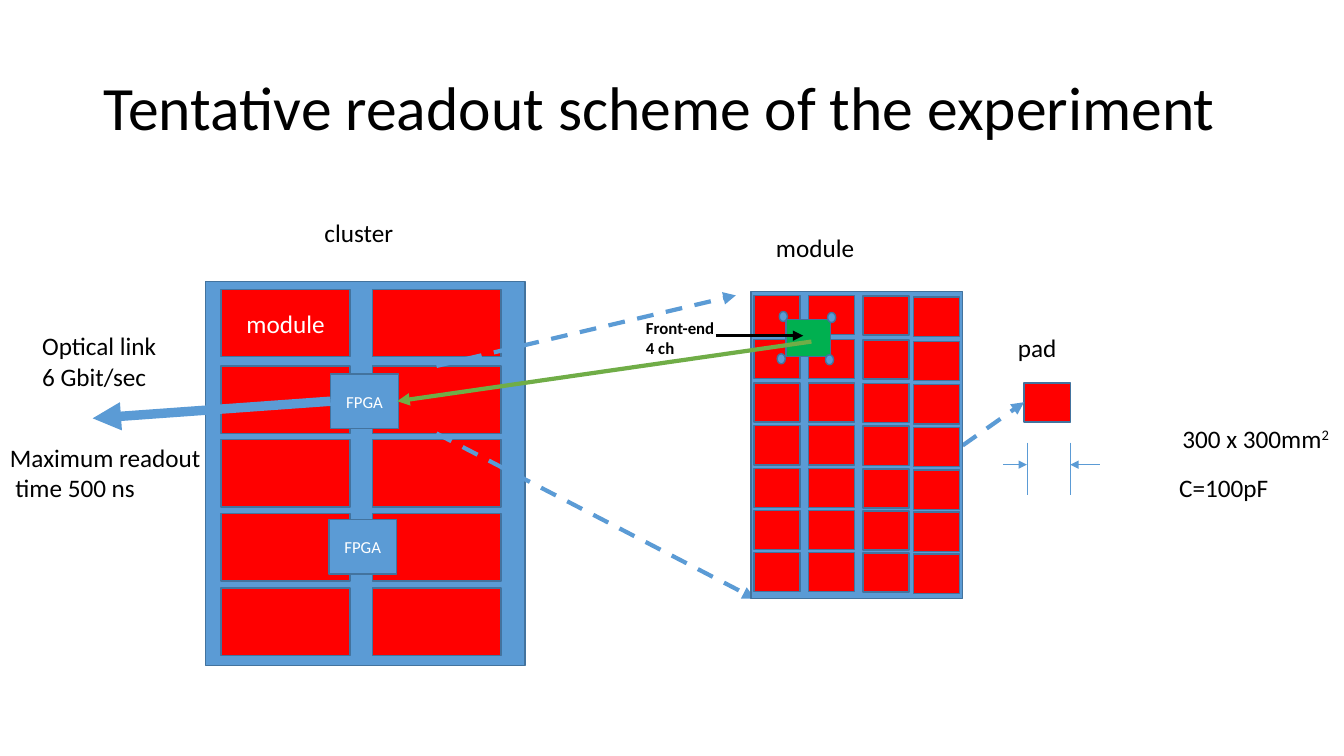
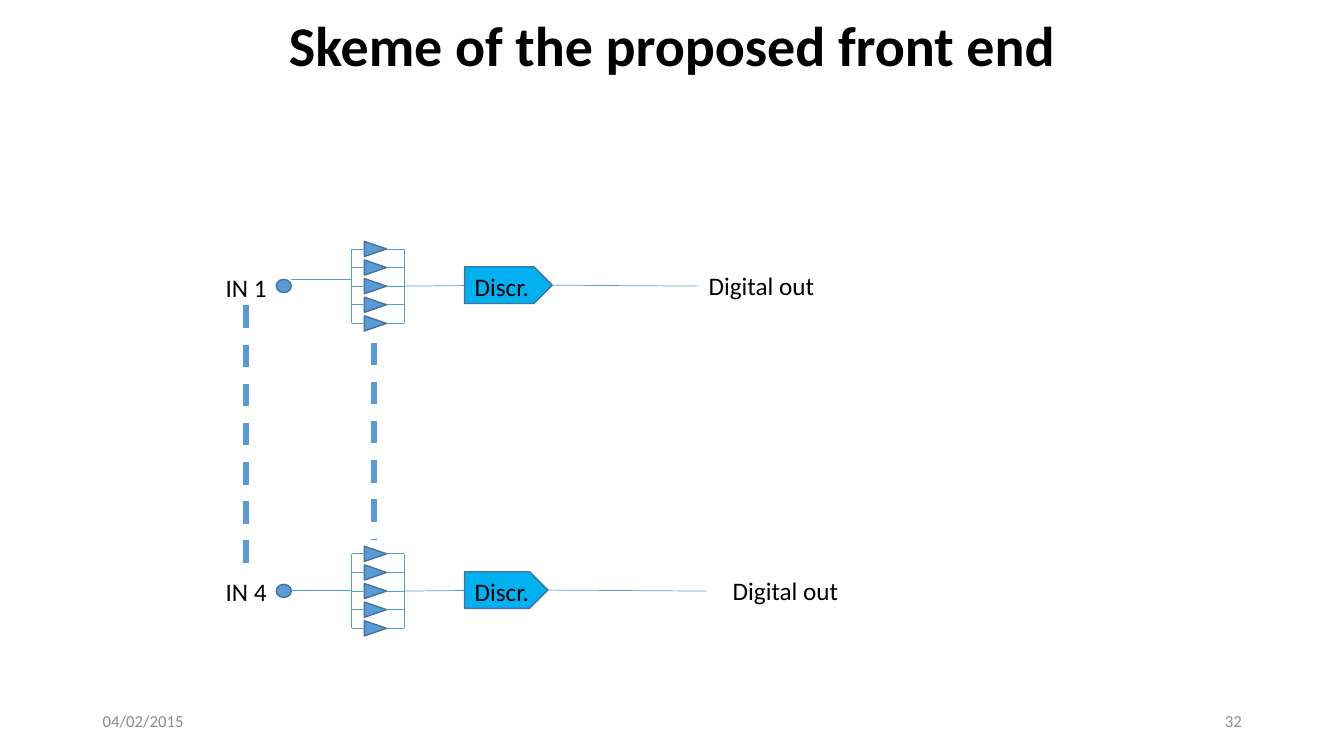
from lxml import etree
from pptx import Presentation
from pptx.dml.color import RGBColor
from pptx.enum.dml import MSO_LINE
from pptx.enum.shapes import MSO_CONNECTOR, MSO_SHAPE
from pptx.enum.text import MSO_ANCHOR, PP_ALIGN
from pptx.oxml.ns import qn
from pptx.util import Pt

RECT, OVAL = MSO_SHAPE.RECTANGLE, MSO_SHAPE.OVAL
TRIANGLE, PLATE = MSO_SHAPE.ISOSCELES_TRIANGLE, MSO_SHAPE.PENTAGON
STRAIGHT, DASH = MSO_CONNECTOR.STRAIGHT, MSO_LINE.DASH
LEFT, CENTER, RIGHT = PP_ALIGN.LEFT, PP_ALIGN.CENTER, PP_ALIGN.RIGHT
TOP, MIDDLE = MSO_ANCHOR.TOP, MSO_ANCHOR.MIDDLE

FONT = "Calibri"
COLORS = {
    "blue": "5B9BD5", "edge": "43739E", "red": "FF0000", "chip": "00B050",
    "green": "70AD47", "cyan": "00B0F0", "black": "000000", "white": "FFFFFF",
    "grey": "8C8C8C",
}


def rgb(name):
    return RGBColor.from_string(COLORS[name])


def write(sp, text, size=18, color="black", bold=False, align=LEFT, anchor=TOP):
    tf = sp.text_frame
    tf.word_wrap = True
    tf.vertical_anchor = anchor
    tf.text = text
    for p in tf.paragraphs:
        p.alignment = align
        for r in p.runs:
            r.font.name = FONT
            r.font.size = Pt(size)
            r.font.bold = bold
            r.font.color.rgb = rgb(color)
    return tf


def add_text(s, x, y, w, h, text, **style):
    return write(s.shapes.add_textbox(Pt(x), Pt(y), Pt(w), Pt(h)), text, **style)


def add_title(s, x, y, w, h, text, size, **style):
    tf = add_text(s, x, y, w, h, text, size=size, anchor=MIDDLE, **style)
    tf.paragraphs[0].line_spacing = 0.9


def add_footer(s, x, y, w, h, date, number):
    half = w / 2
    add_text(s, x, y, half, h, date, size=12, color="grey", anchor=MIDDLE)
    add_text(s, x + half, y, half, h, number, size=12, color="grey",
             align=RIGHT, anchor=MIDDLE)


def add_box(s, x, y, w, h, fill, kind=RECT):
    sp = s.shapes.add_shape(kind, Pt(x), Pt(y), Pt(w), Pt(h))
    sp.shadow.inherit = False
    sp.fill.solid()
    sp.fill.fore_color.rgb = rgb(fill)
    sp.line.color.rgb = rgb("edge")
    sp.line.width = Pt(1)
    return sp


def add_line(s, x1, y1, x2, y2, width=0.5, color="blue", dash=False, arrow=False):
    c = s.shapes.add_connector(STRAIGHT, Pt(x1), Pt(y1), Pt(x2), Pt(y2))
    c.line.color.rgb = rgb(color)
    c.line.width = Pt(width)
    if dash:
        c.line.dash_style = DASH
    spPr = c._element.spPr
    if arrow:
        etree.SubElement(spPr.find(qn("a:ln")), qn("a:tailEnd"), type="triangle")
    etree.SubElement(spPr, qn("a:effectLst"))


def draw_cluster(s, x, y, w, h):
    add_text(s, x + 77.7, y - 49, 80, 29, "cluster")
    add_box(s, x, y, w, h, "blue")
    for row, dy in enumerate((5.7, 60.4, 113, 166, 219)):
        for col in range(2):
            sp = add_box(s, x + 11 + 108 * col, y + dy, 92, 48.2, "red")
            if row == col == 0:
                write(sp, "module", color="white", align=CENTER, anchor=MIDDLE)
    for dx, dy in ((89.3, 66.2), (88, 170)):
        sp = add_box(s, x + dx, y + dy, 48.2, 39, "blue")
        write(sp, "FPGA", size=12, color="white", align=CENTER, anchor=MIDDLE)


def draw_module(s, x, y, w, h):
    add_text(s, x + 10.8, y - 46, 90, 29, "module")
    add_box(s, x, y, w, h, "blue")
    for dx, drop in ((2.2, 0), (41, 0), (80, 0.3), (116, 1.2)):
        for dy in (3, 34.5, 65.5, 96, 126.5, 156.5, 186.5):
            add_box(s, x + dx, y + dy + drop, 33, 28, "red")


def draw_front_end(s, x, y, w, h):
    add_box(s, x, y, w, h, "chip")
    tf = add_text(s, x - 107.3, y - 5, 71, 36, "Front-end\n4 ch", size=12, bold=True)
    tf.margin_right = 0
    add_line(s, x - 50.4, y + 11.6, x + 12.2, y + 11.6, 2.5, "black", arrow=True)
    for dx, dy in ((-5, -5.7), (29.5, -5), (-6.5, 24.5), (28, 25.2)):
        add_box(s, x + dx, y + dy, 5.8, 7.2, "blue", OVAL)


def draw_pad(s, x, y, w, h):
    add_text(s, x - 11.5, y - 39.6, 60, 29, "pad")
    add_box(s, x, y, w, h, "red")
    for tick, start in ((2, -15), (w, w + 21)):
        add_line(s, x + tick, y + 42.5, x + tick, y + 80)
        add_line(s, x + start, y + 58.3, x + tick, y + 58.3, arrow=True)
    p = add_text(s, x + 106, y + 25.2, 125, 29, "300 x 300mm").paragraphs[0]
    r = p.add_run()
    r.text = "2"
    r.font.name = FONT
    r.font.size = Pt(18)
    r.font.color.rgb = rgb("black")
    r._r.get_or_add_rPr().set("baseline", "30000")
    add_text(s, x + 103.7, y + 60.5, 104, 29, "C=100pF")


def draw_optical_link(s, x, y, w, h):
    add_line(s, x + w, y, x, y + h, 6.75, arrow=True)
    add_text(s, x - 43.2, y - 54, 110, 51, "Optical link\n6 Gbit/sec")
    tf = add_text(s, x - 66.2, y + 25.9, 160, 51, "Maximum readout\ntime 500 ns")
    tf.paragraphs[1]._p.get_or_add_pPr().set("marL", str(Pt(4)))


def draw_amplifiers(s, x, y, w, h):
    rows = 5
    for i in range(rows):
        wire_y = y + i * h / (rows - 1)
        sp = add_box(s, x + 11.5, wire_y - 7.9, 10.8, 15.8, "blue", TRIANGLE)
        sp.rotation = 90
        add_line(s, x, wire_y, x + 9.4, wire_y)
        add_line(s, x + 25.2, wire_y, x + w, wire_y)
    for rail in (x, x + w):
        add_line(s, rail, y, rail, y + h)


def draw_channel(s, x, y, label, in_dy, plate_w, wire_end, out_dx):
    bank_x, bank_w, bank_h = x + 97.2, 37.4, 53.2
    mid = y + bank_h / 2
    plate_x = x + 177.8
    draw_amplifiers(s, bank_x, y, bank_w, bank_h)
    add_text(s, x, y + 12.8, 60, 29, label)
    add_box(s, x + 43.2, y + 21.8, 10.8, 9.4, "blue", OVAL)
    add_line(s, x + 54, y + in_dy, bank_x, y + in_dy)
    add_line(s, bank_x + bank_w, mid, plate_x, mid - 0.4)
    sp = add_box(s, plate_x, y + 12.8, plate_w, 26.2, "cyan", PLATE)
    write(sp, "Discr.").margin_right = 0
    add_line(s, plate_x + plate_w, mid - 0.7, x + wire_end, mid)
    add_text(s, x + out_dx, y + 12, 100, 29, "Digital out")


def readout_slide(prs):
    s = prs.slides.add_slide(prs.slide_layouts[6])
    add_title(s, 67, 26.6, 880, 104.4, "Tentative readout scheme of the experiment", 44)
    draw_cluster(s, 147, 201, 228.2, 274.3)
    add_line(s, 311.8, 261.4, 525.6, 211, 3, dash=True, arrow=True)
    add_line(s, 311.8, 309.6, 539.3, 427.7, 3, dash=True, arrow=True)
    draw_pad(s, 731.5, 273.6, 33, 28)
    add_line(s, 687.6, 318.2, 731.5, 287.3, 3, dash=True, arrow=True)
    draw_module(s, 536.4, 208.1, 151.2, 219.6)
    draw_front_end(s, 561.6, 228.2, 31.7, 26.6)
    add_line(s, 579.6, 244, 283.7, 286.6, 3, "green", arrow=True)
    draw_optical_link(s, 66.2, 286.6, 170, 12.2)


def front_end_slide(prs):
    s = prs.slides.add_slide(prs.slide_layouts[6])
    add_title(s, 134, 7.2, 692, 55.4, "Skeme of the proposed front end", 40,
              bold=True, align=CENTER)
    draw_channel(s, 154.1, 177.8, "IN 1", 21.6, 62.6, 345, 345)
    draw_channel(s, 154.1, 395.6, "IN 4", 26.3, 59.4, 350.6, 362.2)
    add_line(s, 267.1, 244.8, 267.1, 386, 4, dash=True)
    add_line(s, 175.7, 218.2, 175.7, 404, 4, dash=True)
    add_footer(s, 66.2, 500.4, 828, 28.8, "04/02/2015", "32")


def main():
    prs = Presentation()
    prs.slide_width, prs.slide_height = Pt(960), Pt(540)
    readout_slide(prs)
    front_end_slide(prs)
    prs.save("out.pptx")


if __name__ == "__main__":
    main()
